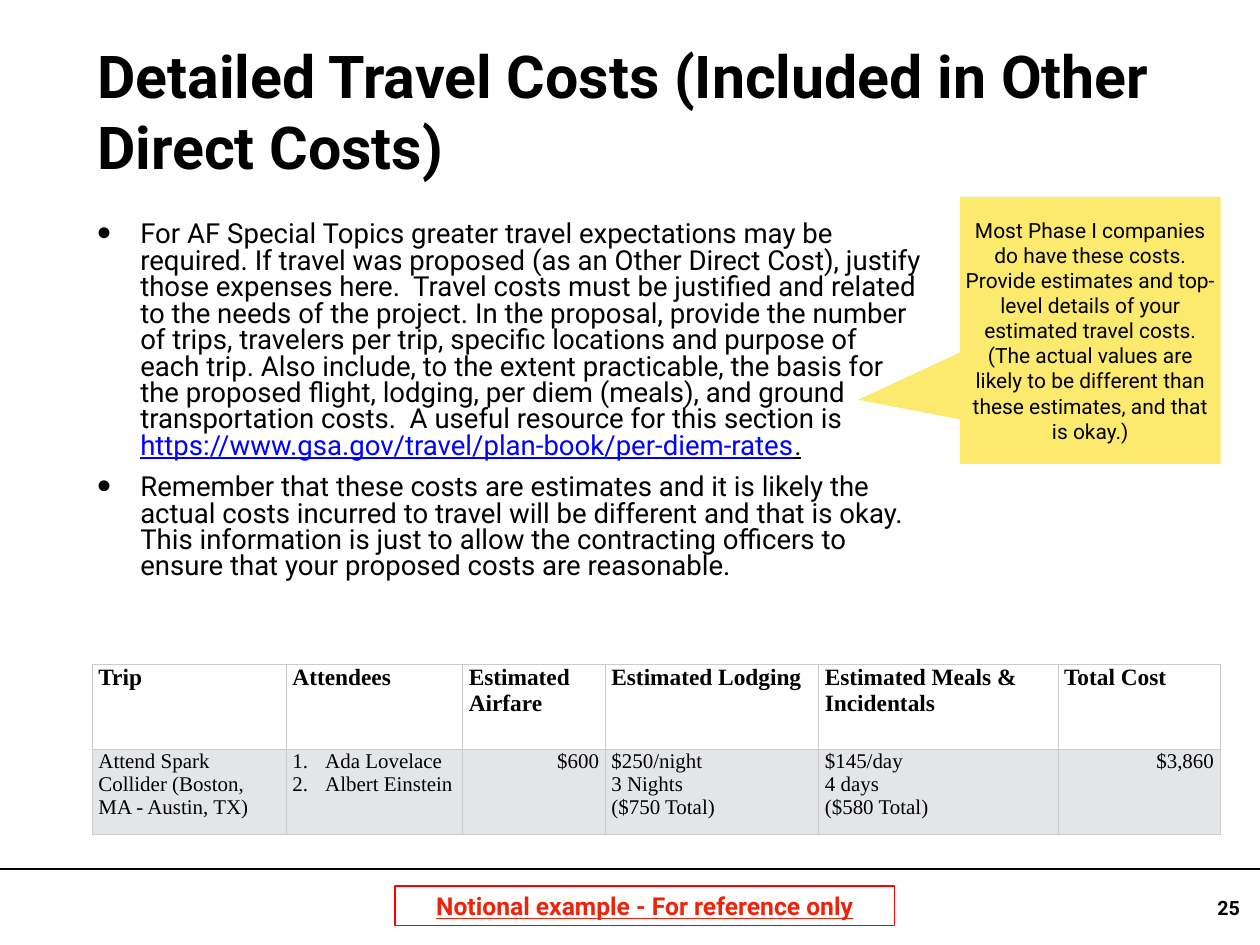
from dataclasses import dataclass

from lxml.etree import SubElement
from pptx import Presentation
from pptx.dml.color import RGBColor
from pptx.enum.shapes import MSO_CONNECTOR, MSO_SHAPE
from pptx.enum.text import MSO_ANCHOR, MSO_AUTO_SIZE, PP_ALIGN
from pptx.oxml.ns import qn
from pptx.util import Pt


@dataclass(frozen=True)
class Theme:
    sans: str = "Roboto"
    serif: str = "Times New Roman"
    black: str = "000000"
    white: str = "FFFFFF"
    link: str = "0000FF"
    banner: str = "EE230C"
    banner_line: str = "FF0000"
    note: str = "FAE232"
    note_opacity: int = 71
    band: str = "E3E5E8"
    grid: str = "CBCBCB"
    title_size: float = 48
    body_size: float = 22.4
    banner_size: float = 20
    header_size: float = 19
    cell_size: float = 17
    number_size: float = 16


@dataclass(frozen=True)
class Box:
    left: float
    top: float
    width: float
    height: float

    def lengths(self):
        return [Pt(v) for v in (self.left, self.top, self.width, self.height)]


THEME = Theme()
PADDING = Pt(4)
SLIDE = Box(0, 0, 1024, 768)

TRAVEL_GUIDANCE = (
    "For AF Special Topics greater travel expectations may be required. If travel was "
    "proposed (as an Other Direct Cost), justify those expenses here.  Travel costs must be "
    "justified and related to the needs of the project. In the proposal, provide the number "
    "of trips, travelers per trip, specific locations and purpose of each trip. Also include, "
    "to the extent practicable, the basis for the proposed flight, lodging, per diem (meals), "
    "and ground transportation costs.  A useful resource for this section is "
)
ESTIMATE_REMINDER = (
    "Remember that these costs are estimates and it is likely the actual costs incurred to "
    "travel will be different and that is okay. This information is just to allow the "
    "contracting officers to ensure that your proposed costs are reasonable."
)
COST_NOTE = (
    "Most Phase I companies do have these costs. Provide estimates and top-level details of "
    "your estimated travel costs. (The actual values are likely to be different than these "
    "estimates, and that is okay.)"
)
COLUMNS = [
    ("Trip", 157.7, ["Attend Spark Collider (Boston, MA - Austin, TX)"], "text"),
    ("Attendees", 143.3, ["Ada Lovelace", "Albert Einstein"], "numbered"),
    ("Estimated Airfare", 115.9, ["$600"], "amount"),
    ("Estimated Lodging", 173.5, ["$250/night", "3 Nights", "($750 Total)"], "text"),
    ("Estimated Meals & Incidentals", 194.4, ["$145/day", "4 days", "($580 Total)"], "text"),
    ("Total Cost", 131.8, ["$3,860"], "amount"),
]


def apply_format(target, values):
    for name, value in values.items():
        setattr(target, name, value)


def add_span(para, text, size, color=THEME.black, name=THEME.sans, **values):
    span = para.add_run()
    span.text = text
    apply_format(span.font, {"name": name, "size": Pt(size), "bold": False, **values})
    span.font.color.rgb = RGBColor.from_string(color)


def set_frame(shape, anchor=MSO_ANCHOR.TOP):
    frame = shape.text_frame
    margins = {f"margin_{side}": PADDING for side in ("left", "top", "right", "bottom")}
    apply_format(frame, {
        "word_wrap": True, "auto_size": MSO_AUTO_SIZE.NONE, "vertical_anchor": anchor, **margins,
    })
    return frame


def place(shape, box):
    apply_format(shape, dict(zip(("left", "top", "width", "height"), box.lengths())))


def hang(para, indent):
    properties = para._p.get_or_add_pPr()
    properties.set("marL", str(Pt(indent)))
    properties.set("indent", str(-Pt(indent)))
    return properties


def add_title(page, box):
    title = page.shapes.title
    place(title, box)
    para = set_frame(title, MSO_ANCHOR.MIDDLE).paragraphs[0]
    para.alignment = PP_ALIGN.LEFT
    add_span(para, "Detailed Travel Costs (Included in Other Direct Costs)",
             THEME.title_size, bold=True)


def add_guidance(page, box):
    body = page.placeholders[1]
    place(body, box)
    frame = set_frame(body)
    bullets = [
        [
            (TRAVEL_GUIDANCE, {}),
            ("https://www.gsa.gov/travel/plan-book/per-diem-rates",
             {"color": THEME.link, "underline": True}),
            (".", {"underline": True}),
        ],
        [(ESTIMATE_REMINDER, {})],
    ]
    for index, spans in enumerate(bullets):
        para = frame.add_paragraph() if index else frame.paragraphs[0]
        properties = hang(para, 35)
        SubElement(properties, qn("a:buSzPct"), val="145000")
        SubElement(properties, qn("a:buChar"), char="•")
        apply_format(para, {"line_spacing": 0.8, "space_before": Pt(12 if index else 0)})
        for text, values in spans:
            add_span(para, text, THEME.body_size, **values)


def add_cost_note(page, box):
    note = page.shapes.add_shape(MSO_SHAPE.RECTANGULAR_CALLOUT, *box.lengths())
    note.shadow.inherit = False
    note.adjustments[0], note.adjustments[1] = -0.89, 0.26
    note.fill.solid()
    note.fill.fore_color.rgb = RGBColor.from_string(THEME.note)
    color = note._element.spPr.find(qn("a:solidFill"))[0]
    SubElement(color, qn("a:alpha"), val=str(THEME.note_opacity * 1000))
    note.line.fill.background()
    para = set_frame(note, MSO_ANCHOR.MIDDLE).paragraphs[0]
    para.alignment = PP_ALIGN.CENTER
    add_span(para, COST_NOTE, THEME.cell_size)


def fill_cell(cell, lines, kind, fill, **values):
    apply_format(cell, {
        "margin_left": Pt(5), "margin_right": Pt(5), "margin_top": 0, "margin_bottom": 0,
        "vertical_anchor": MSO_ANCHOR.TOP,
    })
    properties = cell._tc.get_or_add_tcPr()
    for side in ("lnL", "lnR", "lnT", "lnB"):
        border = SubElement(properties, qn(f"a:{side}"), w=str(Pt(0.5)))
        SubElement(SubElement(border, qn("a:solidFill")), qn("a:srgbClr"), val=THEME.grid)
    cell.fill.solid()
    cell.fill.fore_color.rgb = RGBColor.from_string(fill)
    for index, line in enumerate(lines):
        para = cell.text_frame.add_paragraph() if index else cell.text_frame.paragraphs[0]
        if kind == "numbered":
            SubElement(hang(para, 26.6), qn("a:buAutoNum"), type="arabicPeriod")
        para.alignment = PP_ALIGN.RIGHT if kind == "amount" else PP_ALIGN.LEFT
        add_span(para, line, name=THEME.serif, **values)


def add_cost_table(page, box):
    table = page.shapes.add_table(2, len(COLUMNS), *box.lengths()).table
    table.horz_banding = False
    for row in table.rows:
        row.height = Pt(box.height / 2)
    for index, (heading, width, lines, kind) in enumerate(COLUMNS):
        table.columns[index].width = Pt(width)
        fill_cell(table.cell(0, index), [heading], "text", THEME.white,
                  size=THEME.header_size, bold=True)
        fill_cell(table.cell(1, index), lines, kind, THEME.band, size=THEME.cell_size)


def add_footer(page, box):
    rule = page.shapes.add_connector(
        MSO_CONNECTOR.STRAIGHT, Pt(box.left), Pt(box.top), Pt(box.left + box.width), Pt(box.top))
    rule.line.width = Pt(2)
    rule.line.color.rgb = RGBColor.from_string(THEME.black)
    SubElement(rule._element.spPr, qn("a:effectLst"))

    banner_box = Box(box.left + 321, box.top + 13.6, 406, 32.4)
    banner = page.shapes.add_shape(MSO_SHAPE.RECTANGLE, *banner_box.lengths())
    banner.shadow.inherit = False
    banner.fill.background()
    banner.line.width = Pt(1)
    banner.line.color.rgb = RGBColor.from_string(THEME.banner_line)
    para = set_frame(banner, MSO_ANCHOR.MIDDLE).paragraphs[0]
    para.alignment = PP_ALIGN.CENTER
    add_span(para, "Notional example - For reference only", THEME.banner_size,
             THEME.banner, bold=True, underline=True)

    number_box = Box(box.left + box.width - 46, box.top + 17.4, 41, 27.4)
    number = page.shapes.add_textbox(*number_box.lengths())
    para = set_frame(number).paragraphs[0]
    para.alignment = PP_ALIGN.CENTER
    add_span(para, "25", THEME.number_size, bold=True)


def main():
    deck = Presentation()
    deck.slide_width, deck.slide_height = Pt(SLIDE.width), Pt(SLIDE.height)
    page = deck.slides.add_slide(deck.slide_layouts[1])
    add_title(page, Box(75, 20, 874, 140))
    add_guidance(page, Box(75, 177, 680, 346))
    add_cost_note(page, Box(780, 160, 212, 217))
    add_cost_table(page, Box(75, 540, sum(column[1] for column in COLUMNS), 138))
    add_footer(page, Box(0, 706.4, SLIDE.width, 61.6))
    deck.save("out.pptx")


if __name__ == "__main__":
    main()
